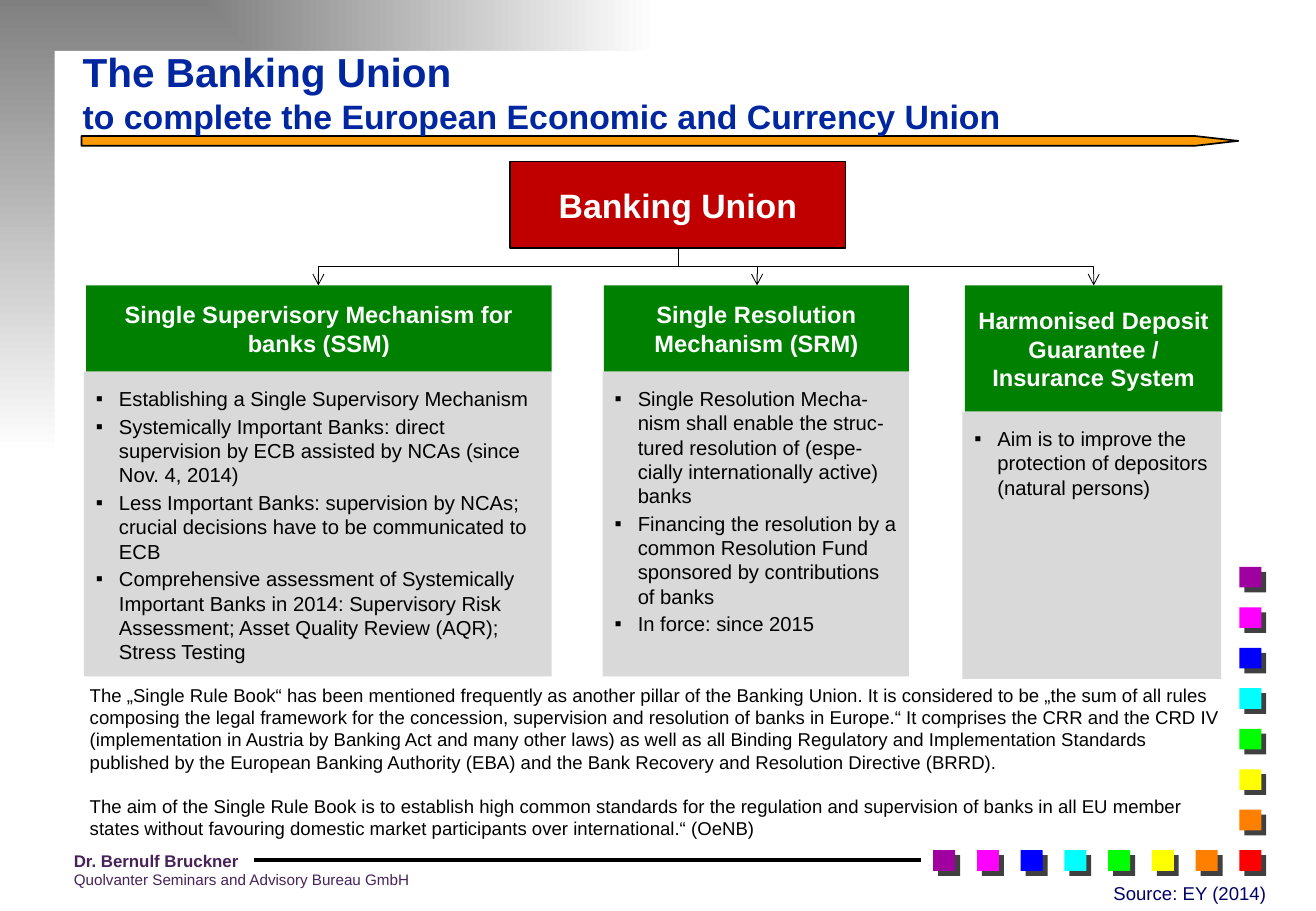
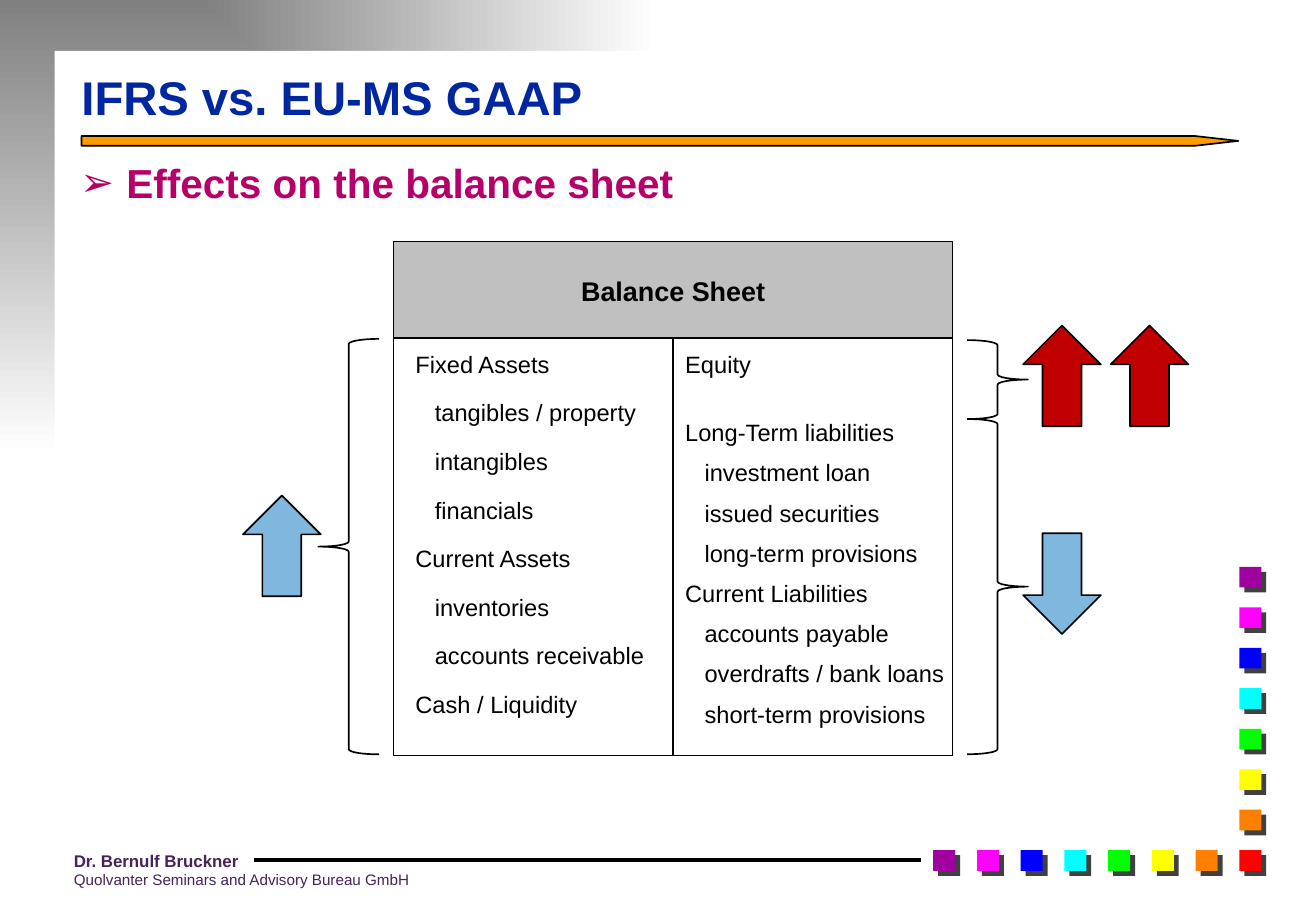
"""Build two slides on the Banking Union and on balance sheet effects."""
from dataclasses import dataclass, replace
from typing import Any, Optional, Sequence

from pptx import Presentation
from pptx.dml.color import RGBColor
from pptx.enum.shapes import MSO_CONNECTOR as Link, MSO_SHAPE as Preset
from pptx.enum.text import MSO_ANCHOR as Anchor, MSO_AUTO_SIZE as Fit, PP_ALIGN as Align
from pptx.oxml.ns import qn
from pptx.util import Inches, Pt
from lxml.etree import SubElement

BLACK = RGBColor(0x00, 0x00, 0x00)
WHITE = RGBColor(0xFF, 0xFF, 0xFF)
GREY = RGBColor(0x80, 0x80, 0x80)
SHADOW = RGBColor(0x40, 0x40, 0x40)
PANEL = RGBColor(0xD9, 0xD9, 0xD9)
SILVER = RGBColor(0xC0, 0xC0, 0xC0)
RED = RGBColor(0xC0, 0x00, 0x00)
GREEN = RGBColor(0x00, 0x80, 0x00)
BLUE = RGBColor(0x00, 0x70, 0xC0)
ORANGE = RGBColor(0xFE, 0x9B, 0x03)
TITLE = RGBColor(0x00, 0x27, 0x9F)
MAGENTA = RGBColor(0xB5, 0x00, 0x69)
FOOTER = RGBColor(0x47, 0x23, 0x59)
NAVY = RGBColor(0x00, 0x00, 0x66)
RAINBOW = [RGBColor.from_string(code) for code in (
    "A000A0", "FF00FF", "0000FF", "00FFFF", "00FF00", "FFFF00", "FF8000", "FF0000")]


@dataclass(frozen=True)
class Area:
    """A place on the page in inches."""
    left: float
    top: float
    width: float
    height: float

    def lengths(self) -> list[int]:
        """Return left, top, width and height as lengths."""
        return [Inches(side) for side in (self.left, self.top, self.width, self.height)]


@dataclass(frozen=True)
class Style:
    """The look of a run of text."""
    size: float
    color: RGBColor = BLACK
    bold: bool = False


@dataclass(frozen=True)
class Line:
    """One paragraph with its spacing, indent and bullet."""
    text: str
    style: Style
    before: float = 0
    indent: float = 0
    bullet: str = ""
    align: Any = Align.LEFT
    spacing: Optional[float] = None


@dataclass(frozen=True)
class Pillar:
    """A heading box with a bulleted panel below it."""
    heading: str
    head: Area
    panel: Area
    points: Sequence[str]
    arrow: float


@dataclass(frozen=True)
class Mark:
    """A preset outline beside the balance sheet."""
    preset: Any
    area: Area
    fill: Optional[RGBColor] = None
    alpha: int = 100


HEADING = Style(14, WHITE, True)
POINT = Style(12)
NOTE = Style(11)
ENTRY = Style(14)

PILLARS = [
    Pillar("Single Supervisory Mechanism for banks (SSM)",
           Area(0.71, 2.35, 3.83, 0.71), Area(0.69, 3.06, 3.85, 2.51),
           ["Establishing a Single Supervisory Mechanism",
            "Systemically Important Banks: direct supervision by ECB assisted by NCAs "
            "(since Nov. 4, 2014)",
            "Less Important Banks: supervision by NCAs; crucial decisions have to be "
            "communicated to ECB",
            "Comprehensive assessment of Systemically Important Banks in 2014: Supervisory "
            "Risk Assessment; Asset Quality Review (AQR); Stress Testing"], 2.62),
    Pillar("Single Resolution Mechanism (SRM)",
           Area(4.97, 2.35, 2.51, 0.71), Area(4.96, 3.06, 2.52, 2.51),
           ["Single Resolution Mecha-nism shall enable the struc-tured resolution of "
            "(espe-cially internationally active) banks",
            "Financing the resolution by a common Resolution Fund sponsored by "
            "contributions of banks",
            "In force: since 2015"], 6.23),
    Pillar("Harmonised Deposit Guarantee / Insurance System",
           Area(7.94, 2.35, 2.12, 1.04), Area(7.92, 3.39, 2.13, 2.2),
           ["Aim is to improve the protection of depositors (natural persons)"], 9),
]
RULE_BOOK = [
    "The „Single Rule Book“ has been mentioned frequently as another pillar of the Banking "
    "Union. It is considered to be „the sum of all rules composing the legal framework for "
    "the concession, supervision and resolution of banks in Europe.“ It comprises the CRR "
    "and the CRD IV (implementation in Austria by Banking Act and many other laws) as well "
    "as all Binding Regulatory and Implementation Standards published by the European "
    "Banking Authority (EBA) and the Bank Recovery and Resolution Directive (BRRD).",
    "The aim of the Single Rule Book is to establish high common standards for the "
    "regulation and supervision of banks in all EU member states without favouring domestic "
    "market participants over international.“ (OeNB)",
]
ASSETS = {
    "Fixed Assets": ["tangibles / property", "intangibles", "financials"],
    "Current Assets": ["inventories", "accounts receivable"],
    "Cash / Liquidity": [],
}
LIABILITIES = {
    "Equity": [],
    "Long-Term liabilities": ["investment loan", "issued securities", "long-term provisions"],
    "Current Liabilities": ["accounts payable", "overdrafts / bank loans",
                            "short-term provisions"],
}
MARKS = [
    Mark(Preset.LEFT_BRACE, Area(2.62, 2.79, 0.5, 3.42)),
    Mark(Preset.RIGHT_BRACE, Area(7.96, 2.8, 0.5, 0.65)),
    Mark(Preset.RIGHT_BRACE, Area(7.96, 3.45, 0.5, 2.76)),
    Mark(Preset.UP_ARROW, Area(2, 4.08, 0.64, 0.83), BLUE, 50),
    Mark(Preset.DOWN_ARROW, Area(8.42, 4.39, 0.64, 0.83), BLUE, 50),
    Mark(Preset.UP_ARROW, Area(8.42, 2.68, 0.64, 0.83), RED),
    Mark(Preset.UP_ARROW, Area(9.14, 2.68, 0.64, 0.83), RED),
]


def apply(target: Any, values: dict[str, Any]) -> None:
    """Set each named attribute of the target."""
    for name, value in values.items():
        setattr(target, name, value)


def add_bullet(para: Any, line: Line) -> None:
    """Give the paragraph a coloured bullet."""
    props = para._p.get_or_add_pPr()
    SubElement(SubElement(props, qn("a:buClr")), qn("a:srgbClr"), val=str(line.style.color))
    SubElement(props, qn("a:buFont"), typeface="Arial")
    SubElement(props, qn("a:buChar"), char=line.bullet)


def write(shape: Any, lines: Sequence[Line], anchor: Any = Anchor.TOP, inset: float = 0.05) -> None:
    """Fill the shape with formatted paragraphs."""
    frame = shape.text_frame
    apply(frame, {"word_wrap": True, "auto_size": Fit.NONE, "vertical_anchor": anchor,
                  "margin_left": Inches(0.1), "margin_right": Inches(0.1),
                  "margin_top": Inches(inset), "margin_bottom": Inches(0.05)})
    for index, line in enumerate(lines):
        para = frame.add_paragraph() if index else frame.paragraphs[0]
        props = para._p.get_or_add_pPr()
        props.set("marL", str(Inches(line.indent)))
        props.set("indent", str(-Inches(line.indent) if line.bullet else 0))
        if line.bullet:
            add_bullet(para, line)
        apply(para, {"alignment": line.align, "line_spacing": line.spacing,
                     "space_before": Pt(line.before if index else 0)})
        span = para.add_run()
        span.text = line.text
        set_font(span, line.style)


def set_font(span: Any, style: Style) -> None:
    """Format one run."""
    apply(span.font, {"name": "Arial", "size": Pt(style.size), "bold": style.bold})
    span.font.color.rgb = style.color


def add_box(page: Any, area: Area, fill: Optional[RGBColor] = None, border: float = 0,
            preset: Any = Preset.RECTANGLE) -> Any:
    """Draw a preset shape without shadow."""
    box = page.shapes.add_shape(preset, *area.lengths())
    box.shadow.inherit = False
    if fill is None:
        box.fill.background()
    else:
        box.fill.solid()
        box.fill.fore_color.rgb = fill
    if border:
        box.line.color.rgb = BLACK
        box.line.width = Pt(border)
    else:
        box.line.fill.background()
    return box


def add_text(page: Any, area: Area, lines: Sequence[Line]) -> None:
    """Draw a text box."""
    write(page.shapes.add_textbox(*area.lengths()), lines)


def add_line(page: Any, kind: Any, ends: Sequence[float], width: float) -> Any:
    """Draw a black connector without shadow."""
    line = page.shapes.add_connector(kind, *[Inches(end) for end in ends])
    line.line.color.rgb = BLACK
    line.line.width = Pt(width)
    SubElement(line.element.spPr, qn("a:effectLst"))
    return line


def add_branch(page: Any, start: tuple[float, float], end: tuple[float, float]) -> None:
    """Draw an elbow arrow that leaves downwards and arrives downwards."""
    across, down = abs(end[0] - start[0]), end[1] - start[1]
    left = (start[0] + end[0] - down) / 2
    top = (start[1] + end[1] - across) / 2
    line = add_line(page, Link.ELBOW, (left, top, left + down, top + across), 0.5)
    turn = {"rot": "5400000"} if end[0] < start[0] else {"rot": "16200000", "flipH": "1"}
    for name, value in turn.items():
        line.element.spPr.find(qn("a:xfrm")).set(name, value)
    SubElement(line.element.spPr.find(qn("a:ln")), qn("a:tailEnd"), type="arrow")


def add_square(page: Any, left: float, top: float, color: RGBColor) -> None:
    """Draw a small square with a hard shadow."""
    square = add_box(page, Area(left, top, 0.18, 0.17), color)
    effects = square.element.spPr.find(qn("a:effectLst"))
    shadow = SubElement(effects, qn("a:outerShdw"), dist=str(Pt(4.2)), dir="2700000", algn="ctr")
    SubElement(shadow, qn("a:srgbClr"), val=str(SHADOW))


def draw_frame(page: Any) -> None:
    """Draw the backdrop, squares, title rule and footer."""
    backdrop = add_box(page, Area(0, 0, 10.82, 7.49))
    backdrop.fill.gradient()
    for stop, color in zip(backdrop.fill.gradient_stops, (GREY, WHITE)):
        stop.color.rgb = color
    gradient = backdrop.element.spPr.find(qn("a:gradFill"))
    gradient.remove(gradient.find(qn("a:lin")))
    focus = SubElement(gradient, qn("a:path"), path="rect")
    SubElement(focus, qn("a:fillToRect"), r="100000", b="100000")
    add_box(page, Area(0.45, 0.42, 10.37, 7.07), WHITE)
    for steps, color in enumerate(reversed(RAINBOW)):
        for left, top in {(10.2 - steps * 0.36, 7), (10.2, 7 - steps / 3)}:
            add_square(page, left, top, color)
    rule = add_box(page, Area(0.67, 1.12, 9.52, 0.08), ORANGE, 1, Preset.PENTAGON)
    rule.adjustments[0] = 4.42
    add_line(page, Link.STRAIGHT, (2.09, 7.08, 7.58, 7.08), 2)
    add_text(page, Area(0.51, 6.95, 3.24, 0.42), [
        Line("Dr. Bernulf Bruckner", Style(10, FOOTER, True)),
        Line("Quolvanter Seminars and Advisory Bureau GmbH", Style(9, FOOTER))])


def move_to_master(page: Any, master: Any) -> None:
    """Move all that is drawn on the page to the slide master."""
    for number, shape in enumerate(list(page.shapes), 100):
        if not shape.is_placeholder:
            shape.element.xpath(".//p:cNvPr")[0].set("id", str(number))
            master.shapes.element.append(shape.element)


def set_title(page: Any, area: Area, size: float, text: str, subtitle: str = "") -> None:
    """Place the title with an optional smaller second line."""
    title = page.shapes.title
    apply(title, dict(zip(("left", "top", "width", "height"), area.lengths())))
    write(title, [Line(text, Style(size, TITLE, True))], Anchor.BOTTOM)
    if subtitle:
        para = title.text_frame.paragraphs[0]
        para.add_line_break()
        span = para.add_run()
        span.text = subtitle
        set_font(span, Style(20, TITLE, True))


def draw_union(page: Any) -> None:
    """Draw the Banking Union and its three pillars."""
    set_title(page, Area(0.58, 0.26, 9.28, 0.91), 24, "The Banking Union",
              "to complete the European Economic and Currency Union")
    for pillar in PILLARS:
        head = add_box(page, pillar.head, GREEN)
        write(head, [Line(pillar.heading, HEADING, align=Align.CENTER)], Anchor.MIDDLE)
        panel = add_box(page, pillar.panel, PANEL)
        write(panel, [Line(point, POINT, 2, 0.19, "▪") for point in pillar.points], inset=0.12)
        add_branch(page, (5.58, 2.04), (pillar.arrow, 2.35))
    union = add_box(page, Area(4.2, 1.33, 2.76, 0.71), RED, 1)
    write(union, [Line("Banking Union", Style(20, WHITE, True), align=Align.CENTER)], Anchor.MIDDLE)
    add_text(page, Area(0.64, 5.58, 9.55, 1.4), [Line(text, NOTE, 13.2) for text in RULE_BOOK])
    add_text(page, Area(8.59, 7.21, 1.93, 0.29),
             [Line("Source: EY (2014)", Style(11, NAVY), align=Align.RIGHT)])


def list_entries(groups: dict[str, list[str]], before: float) -> list[Line]:
    """Turn groups of entries into lines, with the members indented."""
    lines = []
    for group, members in groups.items():
        lines.append(Line(group, ENTRY, before))
        lines += [Line(member, ENTRY, before, 0.16) for member in members]
    return lines


def draw_balance(page: Any) -> None:
    """Draw the balance sheet with its braces and arrows."""
    set_title(page, Area(0.57, 0.44, 9.1, 0.64), 28, "IFRS vs. EU-MS GAAP")
    body = page.placeholders[1]
    apply(body, dict(zip(("left", "top", "width", "height"), Area(0.56, 1.23, 7.52, 0.54).lengths())))
    write(body, [Line("Effects on the balance sheet", Style(24, MAGENTA, True),
                      indent=0.38, bullet="➢", spacing=1.05)])
    header = add_box(page, Area(3.24, 1.99, 4.6, 0.8), SILVER, 0.75)
    write(header, [Line("Balance Sheet", Style(16, BLACK, True), align=Align.CENTER)], Anchor.MIDDLE)
    for left in (3.24, 5.54):
        add_box(page, Area(left, 2.78, 2.3, 3.44), border=0.75)
    add_text(page, Area(3.32, 2.83, 2.22, 3.16), list_entries(ASSETS, 12))
    equity, long_term, *others = list_entries(LIABILITIES, 7)
    add_text(page, Area(5.54, 2.83, 2.35, 3.4), [equity, replace(long_term, before=23.8), *others])
    for mark in MARKS:
        shape = add_box(page, mark.area, mark.fill, 1, mark.preset)
        if mark.alpha < 100:
            color = shape.element.spPr.find(qn("a:solidFill")).find(qn("a:srgbClr"))
            SubElement(color, qn("a:alpha"), val=str(mark.alpha * 1000))


def main() -> None:
    """Build and save the deck."""
    deck = Presentation()
    deck.slide_width, deck.slide_height = Inches(10.83), Inches(7.5)
    union = deck.slides.add_slide(deck.slide_layouts[5])
    draw_frame(union)
    move_to_master(union, deck.slide_master)
    draw_union(union)
    draw_balance(deck.slides.add_slide(deck.slide_layouts[1]))
    deck.save("out.pptx")


if __name__ == "__main__":
    main()
